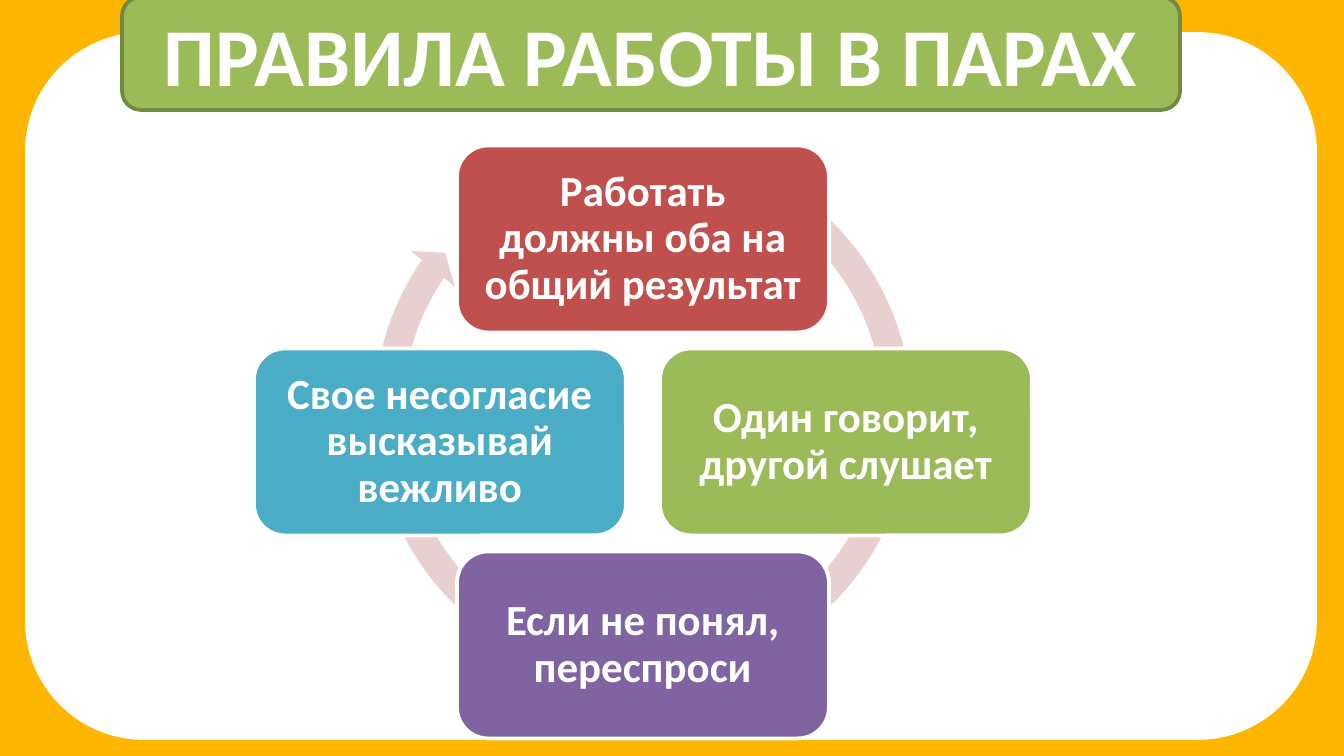
from pptx import Presentation
from pptx.dml.color import RGBColor
from pptx.enum.shapes import MSO_SHAPE
from pptx.enum.text import MSO_ANCHOR, PP_ALIGN
from pptx.util import Emu, Pt

ROUNDED = MSO_SHAPE.ROUNDED_RECTANGLE
CIRCULAR_ARROW = MSO_SHAPE.CIRCULAR_ARROW
MIDDLE = MSO_ANCHOR.MIDDLE
CENTER = PP_ALIGN.CENTER

AMBER = RGBColor(0xFF, 0xB6, 0x01)
WHITE = RGBColor(0xFF, 0xFF, 0xFF)
GREEN = RGBColor(0x9B, 0xBB, 0x59)
DARK_GREEN = RGBColor(0x73, 0x8A, 0x42)
PINK = RGBColor(0xE8, 0xD0, 0xD0)
RED = RGBColor(0xC0, 0x50, 0x4D)
PURPLE = RGBColor(0x80, 0x64, 0xA2)
BLUE = RGBColor(0x4B, 0xAC, 0xC6)

TITLE = "ПРАВИЛА РАБОТЫ В ПАРАХ"
# Text, fill, and column and row steps from the centre of the cycle
RULES = [
    ("Работать должны оба на общий результат", RED, 0, -1),
    ("Один говорит, другой слушает", GREEN, 1, 0),
    ("Если не понял, переспроси", PURPLE, 0, 1),
    ("Свое несогласие высказывай вежливо", BLUE, -1, 0),
]

FONT = "Calibri"
SLIDE_W, SLIDE_H = 1344, 756
PANEL = (27, 34, 1288, 704)
TITLE_BOX = (122, -3, 1058, 113)
RING = (360, 130, 566, 566)
RING_ADJUSTMENTS = (0.05, 2.73, 128.67, 180.06, 0.05)
CENTER_X, CENTER_Y, STEP = 643, 442, 203
CARD_W, CARD_H = 372, 187
PADDING = 13


def px(n):
    return Emu(round(n * 914400 / 134.4))


def add_shape(slide, kind, box, fill, line=None):
    s = slide.shapes.add_shape(kind, *map(px, box))
    s.shadow.inherit = False
    s.fill.solid()
    s.fill.fore_color.rgb = fill
    if line is None:
        s.line.fill.background()
    else:
        s.line.color.rgb = line
        s.line.width = Pt(2)
    return s


def write(s, text, size, spacing=1.0):
    tf = s.text_frame
    tf.word_wrap = True
    tf.vertical_anchor = MIDDLE
    tf.margin_left = tf.margin_right = px(PADDING)
    tf.margin_top = tf.margin_bottom = px(PADDING / 2)
    p = tf.paragraphs[0]
    p.alignment = CENTER
    p.line_spacing = spacing
    r = p.add_run()
    r.text = text
    r.font.name = FONT
    r.font.size = Pt(size)
    r.font.bold = True
    r.font.color.rgb = WHITE


def main():
    prs = Presentation()
    prs.slide_width, prs.slide_height = px(SLIDE_W), px(SLIDE_H)
    slide = prs.slides.add_slide(prs.slide_layouts[6])
    slide.background.fill.solid()
    slide.background.fill.fore_color.rgb = AMBER

    add_shape(slide, ROUNDED, PANEL, WHITE, WHITE)
    write(add_shape(slide, ROUNDED, TITLE_BOX, GREEN, DARK_GREEN), TITLE, 44)

    ring = add_shape(slide, CIRCULAR_ARROW, RING, PINK)
    for i, value in enumerate(RING_ADJUSTMENTS):
        ring.adjustments[i] = value

    for text, fill, col, row in RULES:
        x = CENTER_X + col * STEP - CARD_W / 2
        y = CENTER_Y + row * STEP - CARD_H / 2
        card = add_shape(slide, ROUNDED, (x, y, CARD_W, CARD_H), fill, WHITE)
        write(card, text, 23, 0.9)

    prs.save("out.pptx")


if __name__ == "__main__":
    main()
